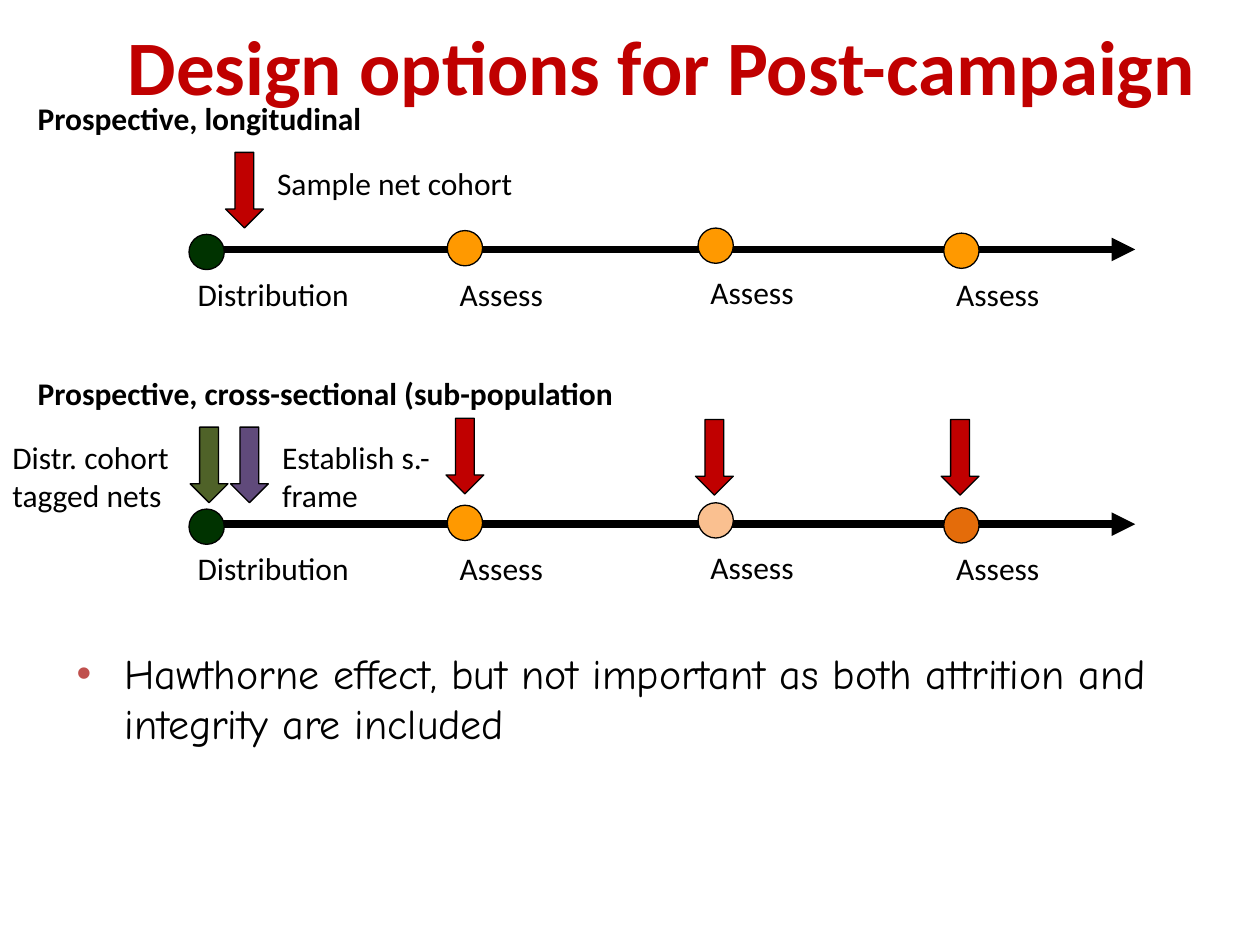
from dataclasses import dataclass

from lxml.etree import SubElement
from pptx import Presentation
from pptx.dml.color import RGBColor
from pptx.enum.shapes import MSO_CONNECTOR as Connector, MSO_SHAPE as Preset
from pptx.enum.text import MSO_ANCHOR as Anchor, MSO_AUTO_SIZE as AutoSize, PP_ALIGN as Align
from pptx.oxml.ns import qn
from pptx.slide import Slide
from pptx.util import Inches, Pt


@dataclass(frozen=True)
class Theme:
    black: str = "000000"
    red: str = "C00000"
    dark_green: str = "003300"
    olive: str = "4F6228"
    purple: str = "604A7B"
    orange: str = "FF9900"
    peach: str = "FAC090"
    burnt_orange: str = "E46C0A"
    bullet: str = "C0504D"
    font: str = "Calibri"
    body_font: str = "Comic Neue"
    title_size: int = 44
    body_size: int = 24
    label_size: int = 18
    outline: float = 0.75
    axis: float = 4.5


THEME = Theme()
DOT_SIZE = 0.28
ARROW_WIDTH, ARROW_HEIGHT = 0.3, 0.6


@dataclass(frozen=True)
class Event:
    """A dot on a timeline; offsets are measured from the timeline's axis."""
    label: str
    left: float
    dot_offset: float
    label_left: float
    label_offset: float
    label_width: float = 1.12


@dataclass(frozen=True)
class Arrow:
    left: float
    top: float
    color: str


@dataclass(frozen=True)
class Note:
    text: str
    left: float
    top: float
    width: float
    height: float


@dataclass(frozen=True)
class Timeline:
    heading: str
    axis_y: float
    dot_colors: tuple[str, ...]
    arrows: tuple[Arrow, ...]
    notes: tuple[Note, ...]


EVENTS = (
    Event("Distribution", 1.5, -0.12, 1.47, 0.15, 1.52),
    Event("Assess", 3.55, -0.15, 3.55, 0.15),
    Event("Assess", 5.54, -0.17, 5.54, 0.14),
    Event("Assess", 7.49, -0.13, 7.49, 0.15),
)

TIMELINES = (
    Timeline(
        "Prospective, longitudinal", 1.98,
        (THEME.dark_green, THEME.orange, THEME.orange, THEME.orange),
        (Arrow(1.79, 1.21, THEME.red),),
        (Note("Sample net cohort", 2.1, 1.25, 3.22, 0.4),),
    ),
    Timeline(
        "Prospective, cross-sectional (sub-population", 4.16,
        (THEME.dark_green, THEME.orange, THEME.peach, THEME.burnt_orange),
        (
            Arrow(1.51, 3.39, THEME.olive),
            Arrow(1.83, 3.39, THEME.purple),
            Arrow(3.54, 3.32, THEME.red),
            Arrow(5.52, 3.33, THEME.red),
            Arrow(7.47, 3.33, THEME.red),
        ),
        (
            Note("Distr. cohort tagged nets", 0, 3.43, 1.61, 0.71),
            Note("Establish s.-frame", 2.14, 3.43, 1.4, 0.71),
        ),
    ),
)


def write_text(frame, text: str, *, size: int = THEME.label_size, font: str = THEME.font,
               color: str = THEME.black, bold: bool = False, align=Align.LEFT,
               anchor=Anchor.TOP):
    """Fill a text frame with one formatted paragraph and return it."""
    frame.word_wrap = True
    frame.auto_size = AutoSize.NONE
    frame.vertical_anchor = anchor
    paragraph = frame.paragraphs[0]
    paragraph.alignment = align
    run = paragraph.add_run()
    run.text = text
    run.font.size = Pt(size)
    run.font.name = font
    run.font.bold = bold
    run.font.color.rgb = RGBColor.from_string(color)
    return paragraph


def add_text(slide: Slide, text: str, left: float, top: float, width: float,
             height: float = 0.4, **text_format):
    box = slide.shapes.add_textbox(Inches(left), Inches(top), Inches(width), Inches(height))
    return write_text(box.text_frame, text, **text_format)


def add_marker(slide: Slide, preset, left: float, top: float, width: float,
               height: float, color: str) -> None:
    shape = slide.shapes.add_shape(preset, Inches(left), Inches(top), Inches(width), Inches(height))
    shape.shadow.inherit = False
    shape.fill.solid()
    shape.fill.fore_color.rgb = RGBColor.from_string(color)
    shape.line.color.rgb = RGBColor.from_string(THEME.black)
    shape.line.width = Pt(THEME.outline)


def add_axis(slide: Slide, y: float) -> None:
    axis = slide.shapes.add_connector(Connector.STRAIGHT, Inches(1.62), Inches(y), Inches(9.01), Inches(y))
    axis.line.color.rgb = RGBColor.from_string(THEME.black)
    axis.line.width = Pt(THEME.axis)
    SubElement(axis.line._get_or_add_ln(), qn("a:tailEnd"), type="triangle")
    SubElement(axis._element.spPr, qn("a:effectLst"))


def add_timeline(slide: Slide, timeline: Timeline) -> None:
    add_axis(slide, timeline.axis_y)
    for event, color in zip(EVENTS, timeline.dot_colors):
        add_marker(slide, Preset.OVAL, event.left, timeline.axis_y + event.dot_offset,
                   DOT_SIZE, DOT_SIZE, color)
        add_text(slide, event.label, event.label_left,
                 timeline.axis_y + event.label_offset, event.label_width)
    add_text(slide, timeline.heading, 0.2, timeline.axis_y - 1.24, 5.47, bold=True)
    for arrow in timeline.arrows:
        add_marker(slide, Preset.DOWN_ARROW, arrow.left, arrow.top,
                   ARROW_WIDTH, ARROW_HEIGHT, arrow.color)
    for note in timeline.notes:
        add_text(slide, note.text, note.left, note.top, note.width, note.height)


def add_bullet(slide: Slide, text: str) -> None:
    paragraph = add_text(slide, text, 0.51, 5.09, 9.22, 2.4,
                         size=THEME.body_size, font=THEME.body_font)
    properties = paragraph._p.get_or_add_pPr()
    properties.set("marL", str(Inches(0.38)))
    properties.set("indent", str(-Inches(0.38)))
    spacing = SubElement(properties, qn("a:spcBef"))
    SubElement(spacing, qn("a:spcPct"), val="20000")
    bullet_color = SubElement(properties, qn("a:buClr"))
    SubElement(bullet_color, qn("a:srgbClr"), val=THEME.bullet)
    SubElement(properties, qn("a:buFont"), typeface="Arial")
    SubElement(properties, qn("a:buChar"), char="•")


def set_title(slide: Slide, text: str) -> None:
    title = slide.shapes.title
    title.left, title.top = Inches(0.6), Inches(0.03)
    title.width, title.height = Inches(9.31), Inches(0.96)
    write_text(title.text_frame, text, size=THEME.title_size, color=THEME.red,
               bold=True, align=Align.CENTER, anchor=Anchor.MIDDLE)


def main() -> None:
    presentation = Presentation()
    presentation.slide_width, presentation.slide_height = Inches(10), Inches(7.5)
    slide = presentation.slides.add_slide(presentation.slide_layouts[5])

    # Title
    set_title(slide, "Design options for Post-campaign")
    # Study designs
    for timeline in TIMELINES:
        add_timeline(slide, timeline)
    # Remark
    add_bullet(slide, "Hawthorne effect, but not important as both attrition and integrity are included")

    presentation.save("out.pptx")


if __name__ == "__main__":
    main()
